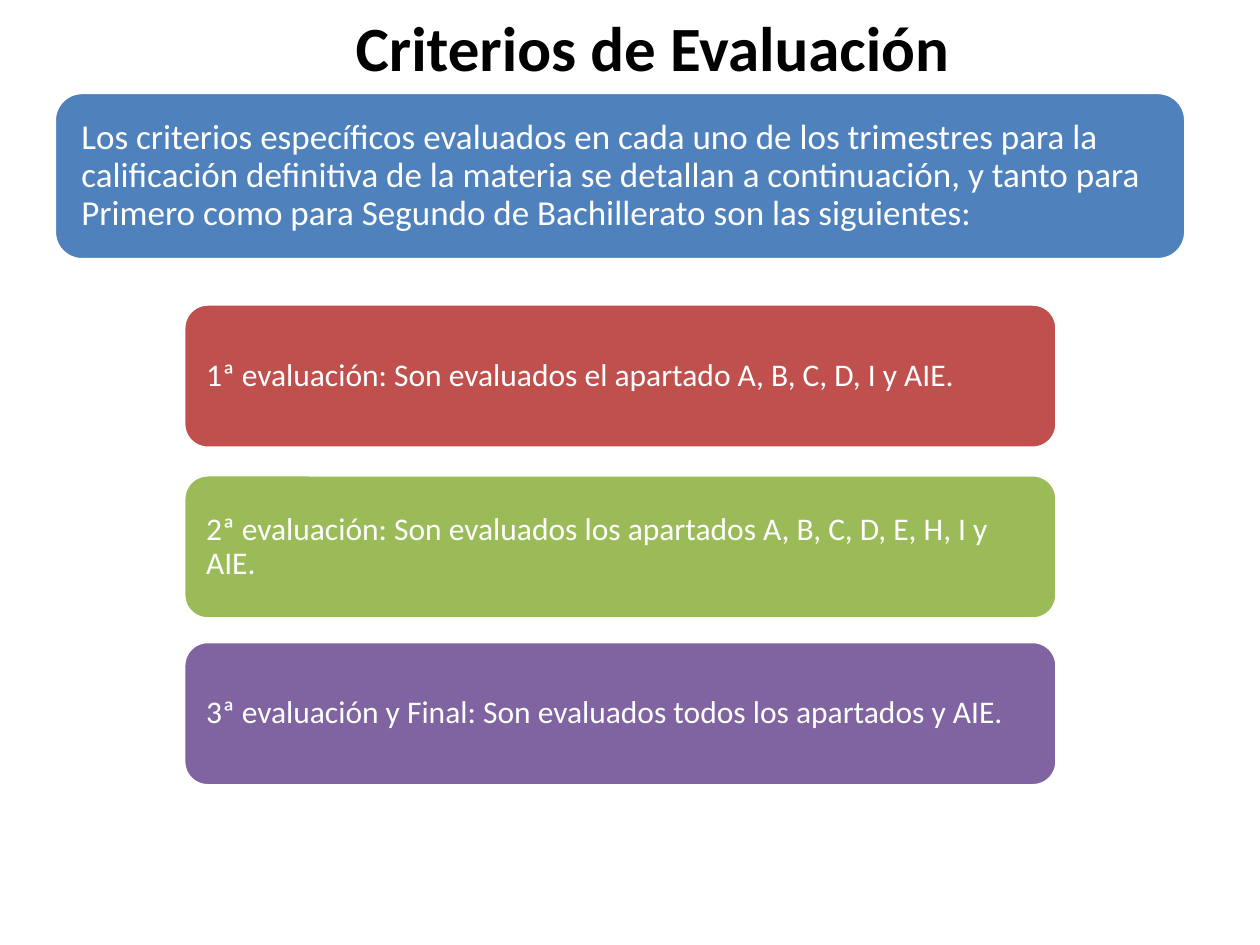
from pptx import Presentation
from pptx.dml.color import RGBColor
from pptx.enum.shapes import MSO_SHAPE
from pptx.enum.text import MSO_ANCHOR, PP_ALIGN
from pptx.util import Pt

ROUNDED = MSO_SHAPE.ROUNDED_RECTANGLE
MIDDLE, TOP = MSO_ANCHOR.MIDDLE, MSO_ANCHOR.TOP
LEFT = PP_ALIGN.LEFT

THEME = {
    "font": "Calibri",
    "black": RGBColor.from_string("000000"),
    "white": RGBColor.from_string("FFFFFF"),
    "blue": RGBColor.from_string("4F81BD"),
    "red": RGBColor.from_string("C0504D"),
    "green": RGBColor.from_string("9BBB59"),
    "purple": RGBColor.from_string("8064A2"),
    "title": 36,
    "intro": 20,
    "term": 18,
}


def set_text(sp, text, size, color, bold=False, wrap=True, anchor=MIDDLE,
             inset_x=7.2, inset_y=3.6, spacing=1.0):
    tf = sp.text_frame
    tf.word_wrap = wrap
    tf.vertical_anchor = anchor
    tf.margin_left = tf.margin_right = Pt(inset_x)
    tf.margin_top = tf.margin_bottom = Pt(inset_y)
    p = tf.paragraphs[0]
    p.alignment = LEFT
    p.line_spacing = spacing
    p.space_before = Pt(0)
    r = p.add_run()
    r.text = text
    r.font.name = THEME["font"]
    r.font.size = Pt(size)
    r.font.bold = bold
    r.font.color.rgb = color


def add_box(s, left, top, width, height, fill, text, size, inset):
    sp = s.shapes.add_shape(ROUNDED, Pt(left), Pt(top), Pt(width), Pt(height))
    sp.shadow.inherit = False
    sp.fill.solid()
    sp.fill.fore_color.rgb = fill
    sp.line.color.rgb = THEME["white"]
    sp.line.width = Pt(2)
    set_text(sp, text, size, THEME["white"], inset_x=inset, inset_y=inset,
             spacing=0.9)


prs = Presentation()
prs.slide_width, prs.slide_height = Pt(720), Pt(540)
s = prs.slides.add_slide(prs.slide_layouts[5])

title = s.shapes.title
title.left, title.top, title.width, title.height = Pt(196), Pt(1.5), Pt(357), Pt(51)
set_text(title, "Criterios de Evaluación", THEME["title"], THEME["black"],
         bold=True, wrap=False, anchor=TOP)

add_box(s, 31, 52.8, 646.6, 95.6, THEME["blue"],
        "Los criterios específicos evaluados en cada uno de los trimestres para la "
        "calificación definitiva de la materia se detallan a continuación, y tanto "
        "para Primero como para Segundo de Bachillerato son las siguientes:",
        THEME["intro"], 10.8)

terms = [
    (173.7, "red", "1ª evaluación: Son evaluados el apartado A, B, C, D, I y AIE."),
    (271.3, "green",
     "2ª evaluación: Son evaluados los apartados A, B, C, D, E, H, I y AIE."),
    (366.6, "purple",
     "3ª evaluación y Final: Son evaluados todos los apartados y AIE."),
]
for top, color, text in terms:
    add_box(s, 105, top, 499, 82.4, THEME[color], text, THEME["term"], 8.8)

prs.save("out.pptx")
